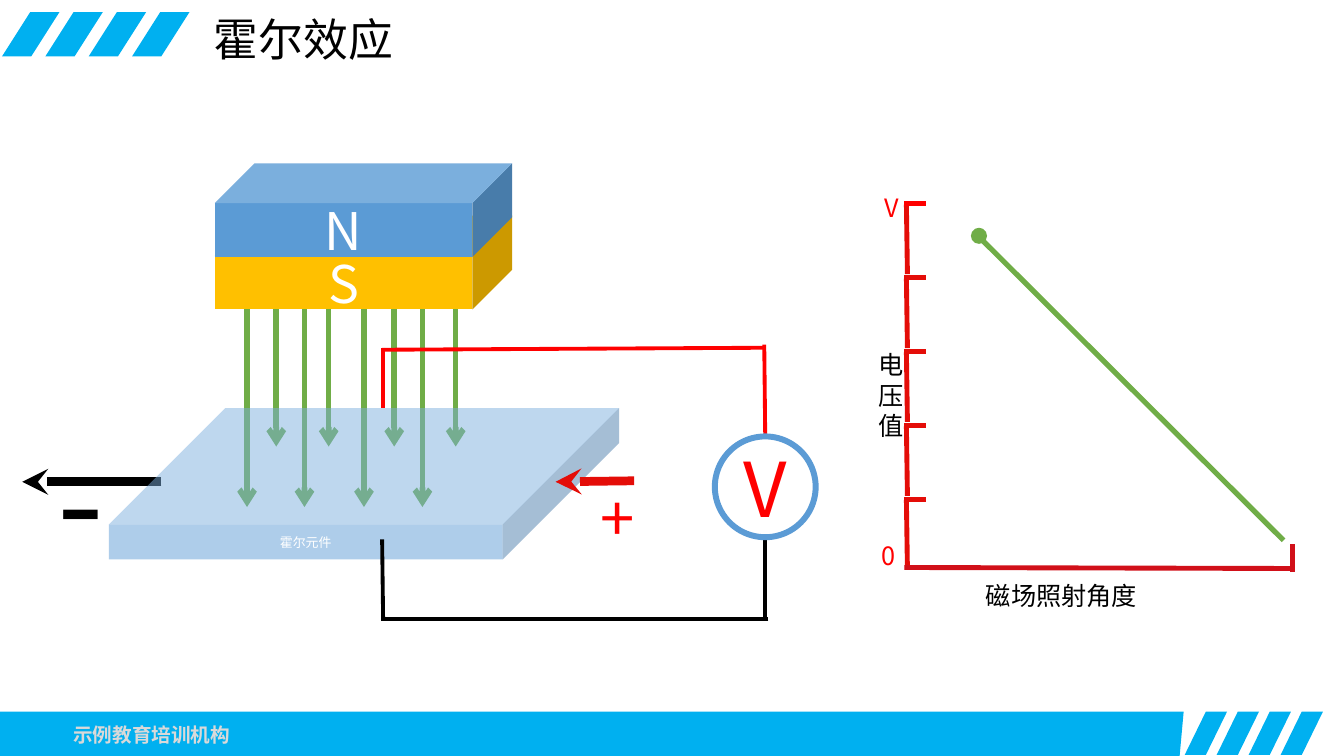
from lxml import etree
from pptx import Presentation
from pptx.dml.color import RGBColor
from pptx.enum.shapes import MSO_CONNECTOR, MSO_SHAPE
from pptx.enum.text import MSO_ANCHOR, PP_ALIGN
from pptx.oxml.ns import qn
from pptx.util import Inches, Pt

STRAIGHT = MSO_CONNECTOR.STRAIGHT
CUBE, OVAL = MSO_SHAPE.CUBE, MSO_SHAPE.OVAL
TOP, MIDDLE = MSO_ANCHOR.TOP, MSO_ANCHOR.MIDDLE
LEFT, CENTER = PP_ALIGN.LEFT, PP_ALIGN.CENTER

FONT = "Noto Sans CJK SC"
COLORS = {
    "sky": "00B0F0", "blue": "5B9BD5", "gold": "FFC000", "green": "70AD47",
    "red": "FF0000", "axis": "E40D08", "base": "D11019",
    "black": "000000", "white": "FFFFFF", "grey": "D9D9D9",
}

TITLE = ("霍尔效应", (2.02, 0.07, 6.32, 0.64))

# count, left, pitch, top, width, height, slant
STRIPES = [
    (4, 0.02, 0.43, 0.12, 0.57, 0.44, 0.28),
    (4, 11.75, 0.317, 7.06, 0.42, 0.43, 0.21),
]
FOOTER_BAR = [(0, 7.06), (11.74, 7.06), (11.7, 7.5), (0, 7.5)]

FIELD_TOP = 3.05
FIELD_LINES = [  # tip height, x positions
    (5.03, (2.45, 3.02, 3.61, 4.19)),
    (4.43, (2.74, 3.26, 3.91, 4.52)),
]

# box, depth, fill, opacity, text, size
CUBES = [
    ((2.13, 2.14, 2.95, 0.93), 0.425, "gold", 100, "S", 37),
    ((2.13, 1.62, 2.95, 0.93), 0.425, "blue", 100, "N", 37),
    ((1.08, 4.05, 5.06, 1.5), 0.769, "blue", 49, "霍尔元件", 9.2),
]

CURRENT_OUT = ((1.6, 4.78), (0.22, 4.78))
CURRENT_IN = ((6.29, 4.77), (5.51, 4.78))

WIRES = [
    ("black", (3.79, 5.35), (3.8, 6.16)),
    ("black", (7.62, 6.14), (3.8, 6.14)),
    ("black", (7.59, 5.33), (7.59, 6.14)),
    ("red", (3.8, 3.45), (3.8, 4.05)),
    ("red", (7.57, 3.45), (3.79, 3.47)),
    ("red", (7.58, 3.42), (7.59, 4.35)),
]
METER = (7.09, 4.33, 1, 1)

AXIS_X, AXIS_TOP, AXIS_STEP, AXIS_STEPS = 8.99, 2.02, 0.733, 5
BASELINE = [((12.82, 5.64), (8.97, 5.63)), ((12.82, 5.4), (12.82, 5.67))]
CURVE = ((12.73, 5.36), (9.7, 2.34))
CURVE_DOT = (9.63, 2.26, 0.16, 0.16)

# text, box, size, colour, wrap
LABELS = [
    ("+", (5.86, 4.71, 0.5, 0.84), 44, "red", False),
    ("-", (0.47, 4.1, 0.61, 1.72), 96, "black", False),
    ("电压值", (8.61, 3.42, 0.29, 1.01), 18, "black", True),
    ("0", (8.64, 5.31, 0.33, 0.4), 18, "red", False),
    ("V", (8.67, 1.86, 0.34, 0.4), 18, "red", False),
    ("磁场照射角度", (9.68, 5.71, 1.84, 0.4), 18, "black", True),
]
FOOTER = ("示例教育培训机构", (0.56, 7.11, 1.89, 0.36))

prs = Presentation()
prs.slide_width, prs.slide_height = Inches(13.33), Inches(7.5)
slide = prs.slides.add_slide(prs.slide_layouts[5])
shapes = slide.shapes


def rgb(name):
    return RGBColor.from_string(COLORS[name])


def inches(values):
    return [Inches(v) for v in values]


def write(sp, text, size, color, align=LEFT, anchor=TOP, wrap=True, bold=False):
    tf = sp.text_frame
    tf.word_wrap, tf.vertical_anchor = wrap, anchor
    p = tf.paragraphs[0]
    p.alignment = align
    r = p.add_run()
    r.text = text
    for key, value in {"name": FONT, "size": Pt(size), "bold": bold}.items():
        setattr(r.font, key, value)
    r.font.color.rgb = rgb(color)
    etree.SubElement(r.font._element, qn("a:ea"), typeface=FONT)


def add_label(text, box, size, color, **fmt):
    write(shapes.add_textbox(*inches(box)), text, size, color, **fmt)


def add_line(start, end, color, width, arrow=None):
    line = shapes.add_connector(STRAIGHT, *inches(start + end))
    line.line.color.rgb = rgb(color)
    line.line.width = Pt(width)
    if arrow:
        etree.SubElement(line.line._get_or_add_ln(), qn("a:tailEnd"), type=arrow)
    etree.SubElement(line._element.spPr, qn("a:effectLst"))


def paint(sp, fill=None, line=None, width=1):
    """Set fill and outline, leaving off whichever is not named."""
    sp.shadow.inherit = False
    if fill:
        sp.fill.solid()
        sp.fill.fore_color.rgb = rgb(fill)
    else:
        sp.fill.background()
    if line:
        sp.line.color.rgb = rgb(line)
        sp.line.width = Pt(width)
    else:
        sp.line.fill.background()


def add_polygon(points, fill):
    start, *rest = [inches(pt) for pt in points]
    builder = shapes.build_freeform(*start, scale=1.0)
    builder.add_line_segments(rest, close=True)
    paint(builder.convert_to_shape(), fill)


def add_cube(box, depth, fill, opacity, text, size):
    sp = shapes.add_shape(CUBE, *inches(box))
    sp.adjustments[0] = depth
    paint(sp, fill)
    if opacity < 100:
        color = sp._element.spPr.find(qn("a:solidFill"))[0]
        etree.SubElement(color, qn("a:alpha"), val=str(opacity * 1000))
    write(sp, text, size, "white", CENTER, MIDDLE)


def add_frame():
    for count, left, pitch, top, width, height, slant in STRIPES:
        for i in range(count):
            x, bottom = left + i * pitch, top + height
            add_polygon([(x + slant, top), (x + width, top),
                         (x + width - slant, bottom), (x, bottom)], "sky")
    add_polygon(FOOTER_BAR, "sky")
    text, box = FOOTER
    add_label(text, box, 14, "grey", align=CENTER, anchor=MIDDLE, bold=True)
    text, box = TITLE
    title = shapes.title
    title.left, title.top, title.width, title.height = inches(box)
    write(title, text, 32, "black")


def add_circuit():
    add_line(*CURRENT_OUT, "black", 6.25, "stealth")
    for tip, xs in FIELD_LINES:
        for x in xs:
            add_line((x, FIELD_TOP), (x, tip), "green", 4, "arrow")
    for cube in CUBES:
        add_cube(*cube)
    add_line(*CURRENT_IN, "axis", 6.25, "stealth")
    for color, start, end in WIRES:
        add_line(start, end, color, 2.75)
    meter = shapes.add_shape(OVAL, *inches(METER))
    paint(meter, line="blue", width=4.25)
    write(meter, "V", 54, "red", CENTER, MIDDLE)


def add_graph():
    add_line(*CURVE, "green", 3.75)
    for i in range(AXIS_STEPS):
        y = AXIS_TOP + i * AXIS_STEP
        add_line((AXIS_X, y + 0.01), (AXIS_X + 0.01, y + 0.7), "axis", 3.5)
        add_line((9.18, y), (8.97, y), "axis" if i else "red", 3.5)
    for start, end in BASELINE:
        add_line(start, end, "base", 3.5)
    paint(shapes.add_shape(OVAL, *inches(CURVE_DOT)), "green")


add_frame()
add_circuit()
add_graph()
for text, box, size, color, wrap in LABELS:
    add_label(text, box, size, color, wrap=wrap)

prs.save("out.pptx")
